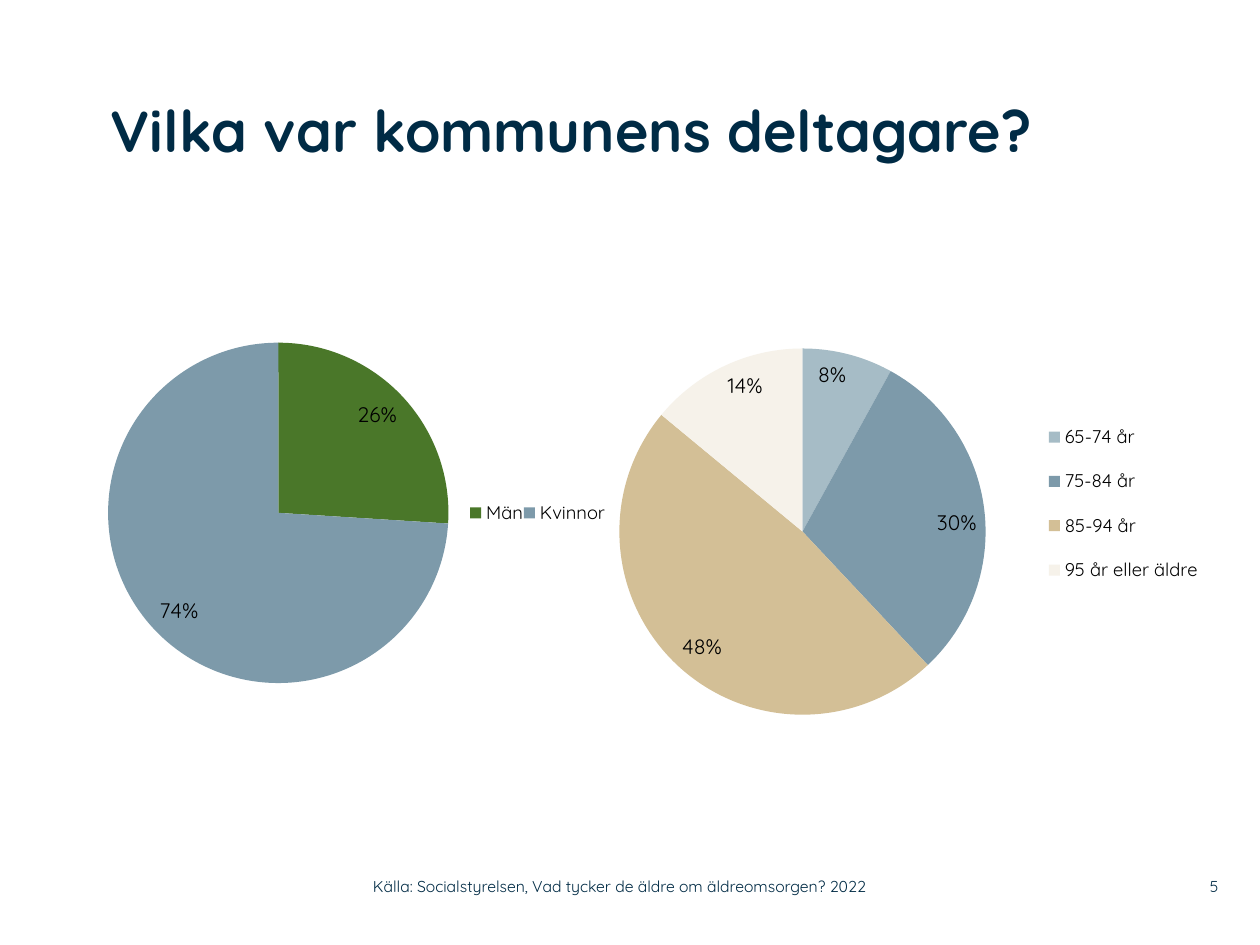
from lxml import etree
from pptx import Presentation
from pptx import util as u
from pptx.chart.data import CategoryChartData
from pptx.dml.color import RGBColor
from pptx.enum import chart as ch, text as tx
from pptx.oxml.ns import qn

FONT = "Quicksand"
COLORS = {"navy": "002B45", "black": "000000", "green": "4A7729", "blue": "7D9AAA",
          "pale_blue": "A6BCC6", "sand": "D3BF96", "cream": "F6F2EA"}

# Text, (left, top, width, height) in inches, and format
TEXTS = [
    ("Vilka var kommunens deltagare?", (0.88, 0.75, 7.6, 1.42),
     {"size": 33, "bold": True, "anchor": "TOP", "align": "LEFT"}),
    ("Källa: Socialstyrelsen, Vad tycker de äldre om äldreomsorgen? 2022",
     (2.96, 6.89, 4.43, 0.29),
     {"size": 9, "bold": False, "anchor": "MIDDLE", "align": "LEFT"}),
    ("5", (9.2, 6.89, 0.47, 0.29),
     {"size": 9, "bold": False, "anchor": "MIDDLE", "align": "RIGHT"}),
]

# Plot and legend are (x, y, width, height) as shares of the chart
PIES = [
    {"place": (-0.23, 2.31, 5.42, 3.42),
     "plot": (0.2, 0.12, 0.5, 0.79), "legend": (0.73, 0.44, 0.2, 0.15),
     "slices": [("Män", 26, "green"), ("Kvinnor", 74, "blue")]},
    {"place": (4.31, 2.39, 5.42, 3.42),
     "plot": (0.11, 0.11, 0.54, 0.85), "legend": (0.71, 0.24, 0.28, 0.46),
     "slices": [("65-74 år", 8, "pale_blue"), ("75-84 år", 30, "blue"),
                ("85-94 år", 48, "sand"), ("95 år eller äldre", 14, "cream")]},
]


def rgb(name):
    return RGBColor.from_string(COLORS[name])


def set_font(font, size, color, bold=False):
    values = {"name": FONT, "size": u.Pt(size), "bold": bold}
    for key, value in values.items():
        setattr(font, key, value)
    font.color.rgb = rgb(color)


def add_text(page, words, place, form):
    box = page.shapes.add_textbox(*map(u.Inches, place))
    frame = box.text_frame
    values = {"margin_left": 0, "margin_top": 0, "margin_right": 0, "margin_bottom": 0,
              "word_wrap": True, "vertical_anchor": tx.MSO_ANCHOR[form["anchor"]]}
    for key, value in values.items():
        setattr(frame, key, value)
    para = frame.paragraphs[0]
    para.alignment = tx.PP_ALIGN[form["align"]]
    span = para.add_run()
    span.text = words
    set_font(span.font, form["size"], "navy", form["bold"])


def manual_layout(parent, shares, after=None, inner=False):
    """Fix the place of a plot area or legend within its chart."""
    for old in parent.findall(qn("c:layout")):
        parent.remove(old)
    layout = etree.Element(qn("c:layout"))
    manual = etree.SubElement(layout, qn("c:manualLayout"))
    entries = [("layoutTarget", "inner")] if inner else []
    entries += [("xMode", "edge"), ("yMode", "edge")]
    entries += zip("xywh", map(str, shares))
    for tag, value in entries:
        etree.SubElement(manual, qn("c:" + tag)).set("val", value)
    if after is None:
        parent.insert(0, layout)
    else:
        after.addnext(layout)


def add_pie(page, pie):
    names, values, colors = zip(*pie["slices"])
    data = CategoryChartData()
    data.categories = names
    data.add_series("Series 1", values)
    chart = page.shapes.add_chart(
        ch.XL_CHART_TYPE.PIE, *map(u.Inches, pie["place"]), data).chart
    set_font(chart.font, 10, "black")
    chart.has_title = False
    chart.has_legend = True
    legend = chart.legend
    legend.position = ch.XL_LEGEND_POSITION.RIGHT
    legend.include_in_layout = False
    set_font(legend.font, 10.5, "black")

    plot = chart.plots[0]
    plot.vary_by_categories = True
    for index, color in enumerate(colors):
        fill = plot.series[0].points[index].format.fill
        fill.solid()
        fill.fore_color.rgb = rgb(color)
    plot.has_data_labels = True
    labels = plot.data_labels
    label_values = {"show_percentage": True, "show_value": False,
                    "number_format": "0%", "number_format_is_linked": False,
                    "position": ch.XL_LABEL_POSITION.INSIDE_END}
    for key, value in label_values.items():
        setattr(labels, key, value)
    set_font(labels.font, 12, "black")

    root = chart.element
    manual_layout(root.find(".//" + qn("c:plotArea")), pie["plot"], inner=True)
    key_box = root.find(".//" + qn("c:legend"))
    manual_layout(key_box, pie["legend"], after=key_box.find(qn("c:legendPos")))


def main():
    deck = Presentation()
    deck.slide_width, deck.slide_height = u.Inches(10), u.Inches(7.5)
    page = deck.slides.add_slide(deck.slide_layouts[6])
    for pie in PIES:
        add_pie(page, pie)
    for words, place, form in TEXTS:
        add_text(page, words, place, form)
    deck.save("out.pptx")


if __name__ == "__main__":
    main()
